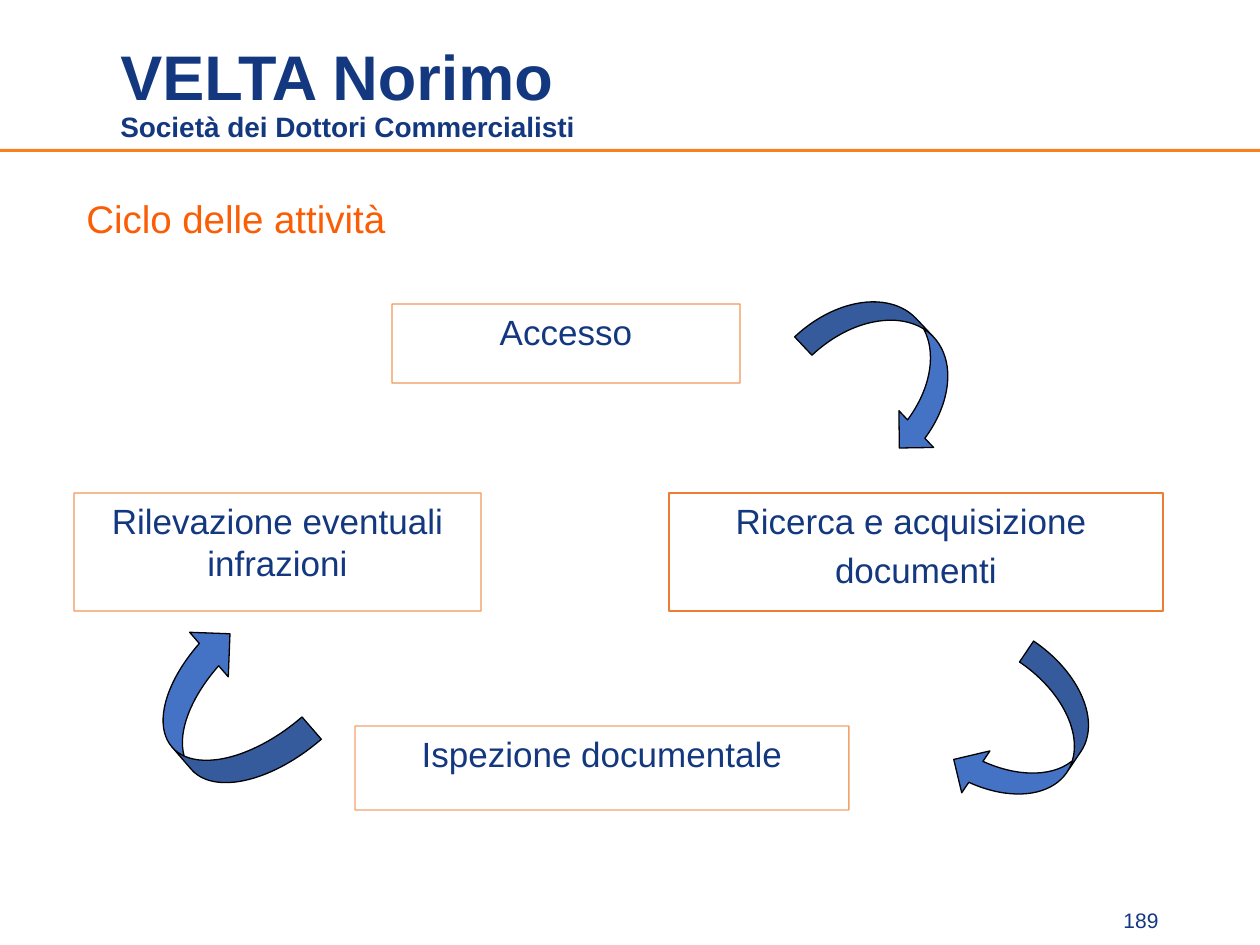
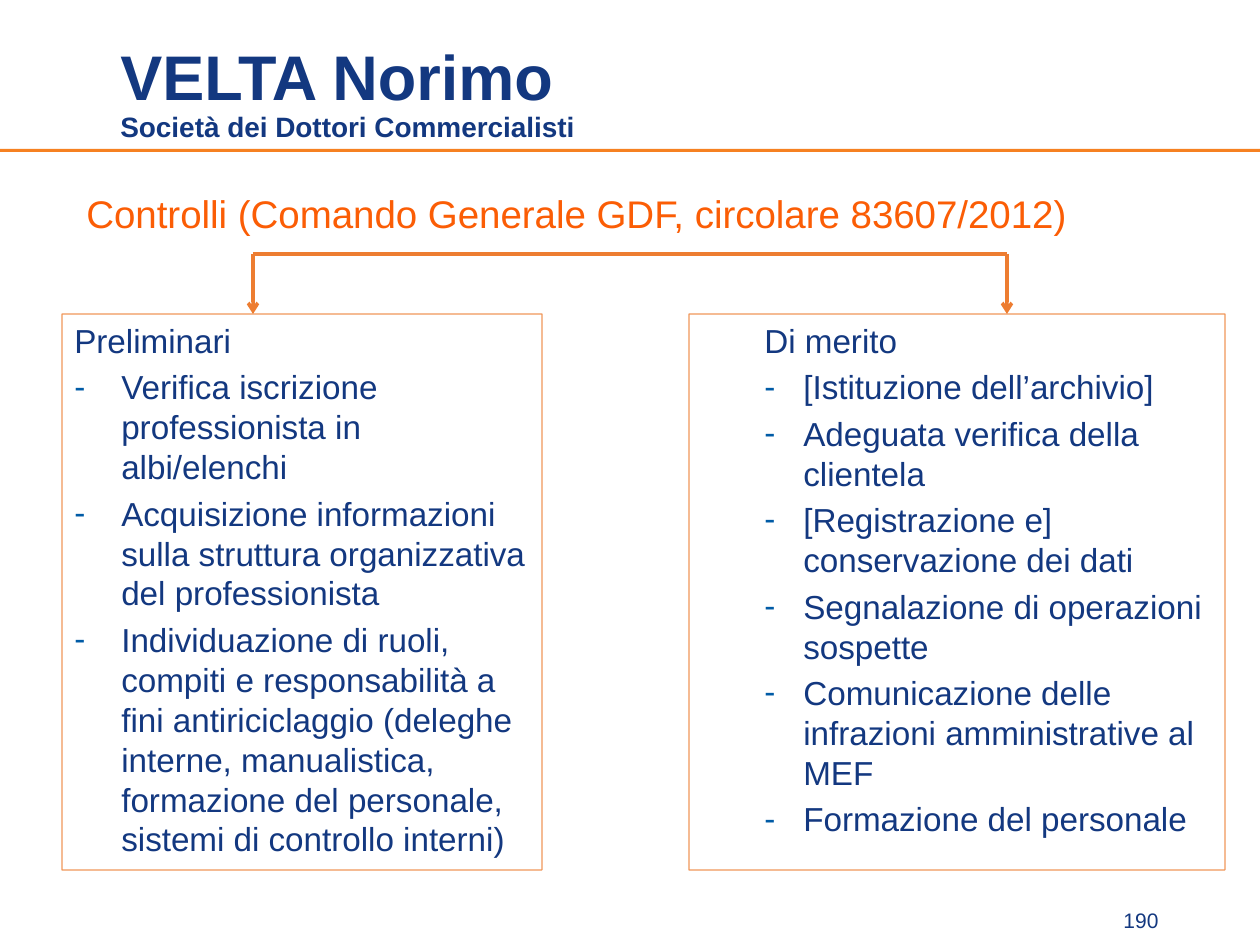
from dataclasses import dataclass
from lxml import etree
from pptx import Presentation
from pptx.dml.color import RGBColor
from pptx.enum.shapes import MSO_CONNECTOR, MSO_SHAPE
from pptx.enum.text import MSO_ANCHOR, PP_ALIGN
from pptx.oxml.ns import qn
from pptx.util import Emu, Pt

RECT = MSO_SHAPE.RECTANGLE
LEFT_ARROW = MSO_SHAPE.CURVED_LEFT_ARROW
UP_ARROW = MSO_SHAPE.CURVED_UP_ARROW
STRAIGHT = MSO_CONNECTOR.STRAIGHT
TOP, BOTTOM = MSO_ANCHOR.TOP, MSO_ANCHOR.BOTTOM
LEFT, CENTER, JUSTIFY = PP_ALIGN.LEFT, PP_ALIGN.CENTER, PP_ALIGN.JUSTIFY


@dataclass(frozen=True)
class Theme:
    font: str = "Arial"
    navy: str = "133880"
    orange: str = "FB5D05"
    band: str = "F68121"
    edge: str = "ED7D31"
    dash: str = "005BA6"
    arrow: str = "4472C4"
    black: str = "000000"
    brand: int = 36
    motto: int = 16
    head: int = 22
    step: int = 20
    item: int = 19
    page: int = 12
    thin: float = 0.75
    thick: int = 2


THEME = Theme()
WIDTH, HEIGHT = 1260, 945
BRAND = ["VELTA Norimo", "Società dei Dottori Commercialisti"]

CYCLE = {
    "head": "Ciclo delle attività", "top": 189, "page": "189",
    "steps": [
        (["Accesso"], (392, 304, 348, 79), 80),
        (["Ricerca e acquisizione ", "documenti"], (669, 493, 494, 118), 100),
        (["Ispezione documentale"], (355, 726, 494, 84), 71),
        (["Rilevazione eventuali infrazioni"], (74, 493, 407, 118), 80),
    ],
    "arrows": [
        (LEFT_ARROW, (842, 278, 101, 178), 316.7, False),
        (LEFT_ARROW, (978, 655, 101, 168), 34, False),
        (UP_ARROW, (137, 655, 169, 118), 49.1, True),
    ],
}

CHECKS = {
    "head": "Controlli (Comando Generale GDF, circolare 83607/2012)",
    "top": 184, "page": "190",
    "lists": [
        {"x": 62, "width": 480, "start": 0, "indent": 47, "lines": [
            "Preliminari",
            "Verifica iscrizione professionista in albi/elenchi",
            "Acquisizione informazioni sulla struttura organizzativa "
            "del professionista",
            "Individuazione di ruoli, compiti e responsabilità a fini "
            "antiriciclaggio (deleghe interne, manualistica, formazione "
            "del personale, sistemi di controllo interni)"]},
        {"x": 689, "width": 536, "start": 63, "indent": 39, "lines": [
            "Di merito",
            "[Istituzione dell’archivio]",
            "Adeguata verifica della clientela",
            "[Registrazione e] conservazione dei dati",
            "Segnalazione di operazioni sospette",
            "Comunicazione delle infrazioni amministrative al MEF",
            "Formazione del personale"]},
    ],
    "list_top": 314, "list_height": 556,
    "fork": (253, 1007, 254),
}


def px(count):
    return Emu(round(count * 914400 / 126))


def color(code):
    return RGBColor.from_string(code)


def add_xml(parent, tag, **attrs):
    return etree.SubElement(parent, qn(tag), attrs)


def write(shape, lines, size, tint=THEME.navy, align=LEFT, anchor=TOP,
          bold=False):
    frame = shape.text_frame
    frame.text = "\n".join(lines)
    frame.word_wrap = True
    frame.vertical_anchor = anchor
    for index, para in enumerate(frame.paragraphs):
        para.alignment = align
        if index:
            para.space_before = Pt(size * 0.2)
        for run in para.runs:
            run.font.name = THEME.font
            run.font.size = Pt(size)
            run.font.bold = bold
            run.font.color.rgb = color(tint)
    return frame.paragraphs


def add_text(slide, box, lines, size, **style):
    return write(slide.shapes.add_textbox(*map(px, box)), lines, size, **style)


def add_shape(slide, kind, box, fill=None, line=None, alpha=100):
    shape = slide.shapes.add_shape(kind, *map(px, box))
    shape.shadow.inherit = False
    if fill:
        shape.fill.solid()
        shape.fill.fore_color.rgb = color(fill)
    else:
        shape.fill.background()
    if line:
        shape.line.color.rgb = color(line)
        shape.line.width = Pt(THEME.thin)
        if alpha < 100:
            tint = shape.line._ln.find(".//" + qn("a:srgbClr"))
            add_xml(tint, "a:alpha", val=str(alpha * 1000))
    else:
        shape.line.fill.background()
    return shape


def add_line(slide, start, end, head=False):
    line = slide.shapes.add_connector(STRAIGHT, *map(px, start + end))
    line.line.color.rgb = color(THEME.edge)
    line.line.width = Pt(THEME.thick)
    if head:
        add_xml(line.line._ln, "a:tailEnd", type="arrow")
    add_xml(line._element.spPr, "a:effectLst")


def add_slide(deck, data):
    slide = deck.slides.add_slide(deck.slide_layouts[6])
    add_shape(slide, RECT, (0, 149, WIDTH, 3), fill=THEME.band)
    paras = add_text(slide, (108, 77, 859, 73), BRAND, THEME.brand, bold=True)
    for para in paras:
        para.line_spacing = Pt(17)
        para.space_before = Pt(0)
    paras[1].runs[0].font.size = Pt(THEME.motto)
    add_text(slide, (1086, 902, 110, 37), [data["page"]], THEME.page,
             align=CENTER, anchor=BOTTOM)
    add_text(slide, (74, data["top"], 1068, 108), [data["head"]], THEME.head,
             tint=THEME.orange, align=JUSTIFY)
    return slide


def draw_cycle(deck):
    slide = add_slide(deck, CYCLE)
    for lines, box, alpha in CYCLE["steps"]:
        step = add_shape(slide, RECT, box, line=THEME.edge, alpha=alpha)
        write(step, lines, THEME.step, align=CENTER)
    for kind, box, angle, flip in CYCLE["arrows"]:
        arrow = add_shape(slide, kind, box, THEME.arrow, THEME.black)
        arrow.rotation = angle
        if flip:
            arrow._element.spPr.xfrm.set("flipH", "1")


def add_dash(para, start, indent):
    props = para._p.get_or_add_pPr()
    props.set("marL", str(px(start + indent)))
    props.set("indent", str(-px(indent)))
    add_xml(add_xml(props, "a:buClr"), "a:srgbClr", val=THEME.dash)
    add_xml(props, "a:buFont", typeface=THEME.font)
    add_xml(props, "a:buChar", char="-")


def draw_checks(deck):
    slide = add_slide(deck, CHECKS)
    top = CHECKS["list_top"]
    for part in CHECKS["lists"]:
        box = part["x"], top, part["width"], CHECKS["list_height"]
        panel = add_shape(slide, RECT, box, line=THEME.edge, alpha=80)
        title, *items = write(panel, part["lines"], THEME.item)
        title._p.get_or_add_pPr().set("marL", str(px(part["start"])))
        for para in items:
            add_dash(para, part["start"], part["indent"])
    left, right, level = CHECKS["fork"]
    add_line(slide, (left, level), (right, level))
    for x in (left, right):
        add_line(slide, (x, level), (x, top), head=True)


def main():
    deck = Presentation()
    deck.slide_width, deck.slide_height = px(WIDTH), px(HEIGHT)
    draw_cycle(deck)
    draw_checks(deck)
    deck.save("out.pptx")


if __name__ == "__main__":
    main()
